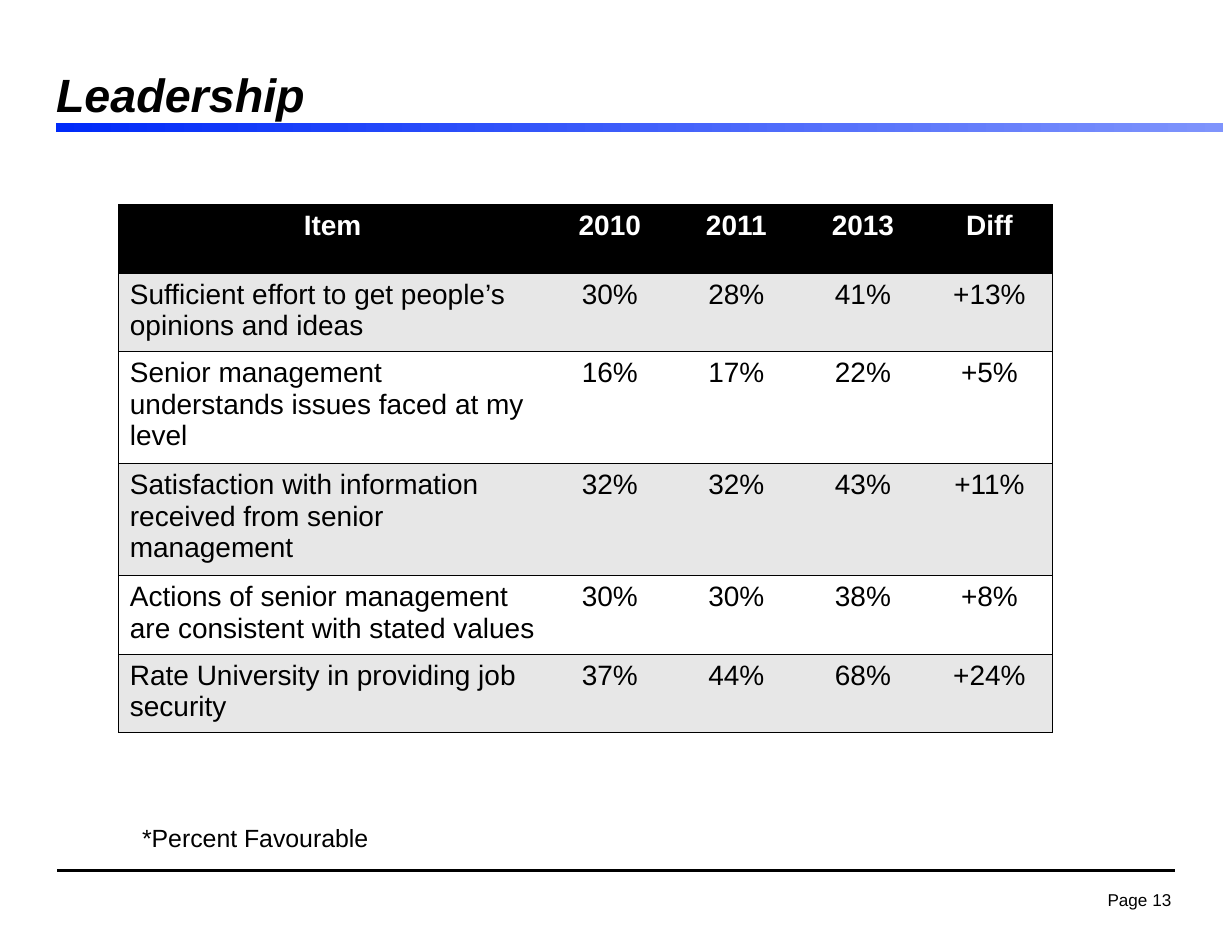
"""Build the Leadership survey results slide."""
from dataclasses import dataclass

from lxml.etree import SubElement
from pptx import Presentation
from pptx.dml.color import RGBColor as Color
from pptx.enum.shapes import MSO_CONNECTOR as Connector, MSO_SHAPE as Shape
from pptx.enum.text import MSO_ANCHOR as Anchor, MSO_AUTO_SIZE as AutoSize, PP_ALIGN as Align
from pptx.oxml.ns import qn
from pptx.util import Inches, Pt


@dataclass(frozen=True)
class Theme:
    font: str = "Arial"
    black: str = "000000"
    white: str = "FFFFFF"
    band: str = "E7E7E7"
    bar_start: str = "002AF9"
    bar_end: str = "7F94FC"
    title_size: int = 30
    table_size: int = 18
    note_size: int = 16
    page_size: int = 11


theme = Theme()


def write(frame, text, size, color=theme.black, bold=False, italic=False, align=Align.LEFT):
    para = frame.paragraphs[0]
    para.alignment = align
    para.space_before = Pt(0)
    span = para.add_run()
    span.text = text
    span.font.name = theme.font
    span.font.size = Pt(size)
    span.font.bold = bold
    span.font.italic = italic
    span.font.color.rgb = Color.from_string(color)
    return para


def add_border(cell, side, visible):
    line = SubElement(cell._tc.get_or_add_tcPr(), qn(f"a:ln{side}"), w=str(Pt(1)))
    if visible:
        fill = SubElement(line, qn("a:solidFill"))
        SubElement(fill, qn("a:srgbClr"), val=theme.black)
    else:
        SubElement(line, qn("a:noFill"))


deck = Presentation()
deck.slide_width, deck.slide_height = Inches(11), Inches(8.5)
page = deck.slides.add_slide(deck.slide_layouts[5])

footer_line = page.shapes.add_connector(
    Connector.STRAIGHT, Inches(0.51), Inches(7.77), Inches(10.49), Inches(7.77))
footer_line.line.color.rgb = Color.from_string(theme.black)
footer_line.line.width = Pt(2)
SubElement(footer_line._element.spPr, qn("a:effectLst"))

page_box = page.shapes.add_textbox(Inches(9.76), Inches(7.9), Inches(0.81), Inches(0.28))
frame = page_box.text_frame
frame.word_wrap = False
frame.margin_left = frame.margin_right = Inches(0.11)
frame.margin_top = frame.margin_bottom = Inches(0.06)
para = write(frame, "Page 13", theme.page_size, align=Align.RIGHT)
para.line_spacing = 0.9

title_bar = page.shapes.add_shape(
    Shape.RECTANGLE, Inches(0.5), Inches(1.1), Inches(10.42), Inches(0.08))
title_bar.shadow.inherit = False
title_bar.line.fill.background()
title_bar.fill.gradient()
title_bar.fill.gradient_angle = 0
for stop, color in zip(title_bar.fill.gradient_stops, (theme.bar_start, theme.bar_end)):
    stop.color.rgb = Color.from_string(color)

title = page.shapes.title
title.left, title.top = Inches(0.5), Inches(0.67)
title.width, title.height = Inches(10.33), Inches(0.42)
frame = title.text_frame
frame.auto_size = AutoSize.NONE
frame.word_wrap = True
frame.vertical_anchor = Anchor.BOTTOM
frame.margin_left = frame.margin_right = frame.margin_top = frame.margin_bottom = 0
write(frame, "Leadership", theme.title_size, bold=True, italic=True)

results = [
    ("Item", "2010", "2011", "2013", "Diff"),
    ("Sufficient effort to get people’s opinions and ideas", "30%", "28%", "41%", "+13%"),
    ("Senior management understands issues faced at my level", "16%", "17%", "22%", "+5%"),
    ("Satisfaction with information received from senior management",
     "32%", "32%", "43%", "+11%"),
    ("Actions of senior management are consistent with stated values",
     "30%", "30%", "38%", "+8%"),
    ("Rate University in providing job security", "37%", "44%", "68%", "+24%"),
]
row_count, column_count = len(results), len(results[0])
table = page.shapes.add_table(
    row_count, column_count, Inches(1.06), Inches(1.83), Inches(8.35), Inches(4.11)).table
table.first_row = table.horz_banding = False
for index, column in enumerate(table.columns):
    column.width = Inches(1.13 if index else 3.82)

for row_index, values in enumerate(results):
    header = row_index == 0
    table.rows[row_index].height = Inches(0.61 if header else 0.7)
    band = theme.black if header else theme.band if row_index % 2 else theme.white
    for column_index, value in enumerate(values):
        cell = table.cell(row_index, column_index)
        add_border(cell, "L", column_index == 0)
        add_border(cell, "R", column_index == column_count - 1)
        add_border(cell, "T", True)
        add_border(cell, "B", True)
        cell.fill.solid()
        cell.fill.fore_color.rgb = Color.from_string(band)
        write(cell.text_frame, value, theme.table_size,
              color=theme.white if header else theme.black, bold=header,
              align=Align.CENTER if header or column_index else Align.LEFT)

note = page.shapes.add_textbox(Inches(1.17), Inches(7.3), Inches(3.58), Inches(0.37))
note.text_frame.word_wrap = True
write(note.text_frame, "*Percent Favourable", theme.note_size)

deck.save("out.pptx")
